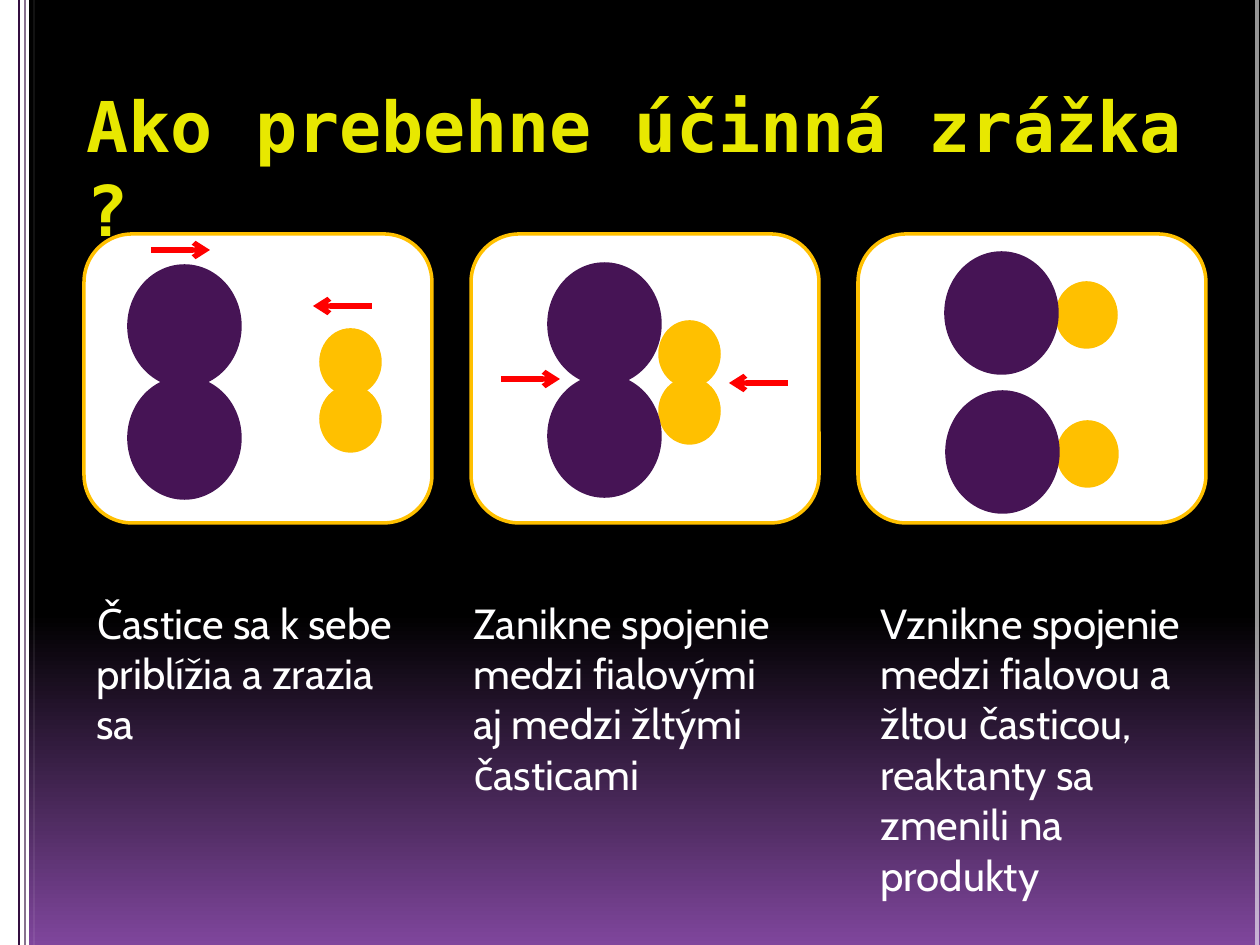
from lxml.etree import SubElement
from pptx import Presentation
from pptx.dml.color import RGBColor as RGB
from pptx.enum.shapes import MSO_CONNECTOR as CONN, MSO_SHAPE as SHAPE
from pptx.enum.text import MSO_ANCHOR as ANCHOR, PP_ALIGN as ALIGN
from pptx.oxml.ns import qn
from pptx.util import Pt

PX = 914400 / 126
COLORS = {k: RGB.from_string(v) for k, v in {
    "black": "000000", "white": "FFFFFF", "glow": "7F469C", "rule": "340F40",
    "title": "E8E800", "yellow": "FFC000", "violet": "461455", "red": "FF0000",
}.items()}


def add_filled(kind, box, fill, line):
    s = shapes.add_shape(kind, *(round(v * PX) for v in box))
    s.shadow.inherit = False
    s.fill.solid()
    s.fill.fore_color.rgb = COLORS[fill]
    s.line.color.rgb = COLORS[line]
    s.line.width = Pt(2)
    return s


def add_line(ends, color, width, opacity=100, arrow=False):
    c = shapes.add_connector(CONN.STRAIGHT, *(round(v * PX) for v in ends))
    c.line.color.rgb = COLORS[color]
    c.line.width = Pt(width)
    ln = c.line._get_or_add_ln()
    if opacity < 100:
        clr = ln.find(".//" + qn("a:srgbClr"))
        SubElement(clr, qn("a:alpha"), val=str(opacity * 1000))
    if arrow:
        SubElement(ln, qn("a:tailEnd"), type="arrow")
    SubElement(c._element.spPr, qn("a:effectLst"))


prs = Presentation()
prs.slide_width, prs.slide_height = round(1260 * PX), round(945 * PX)
slide = prs.slides.add_slide(prs.slide_layouts[5])
shapes = slide.shapes

# Background: black, fading to violet in the lower third
bg = slide.background.fill
bg.gradient()
bg.gradient_angle = 270
for stop, position, color in zip(bg.gradient_stops, (0.65, 1), ("black", "glow")):
    stop.position = position
    stop.color.rgb = COLORS[color]

# Side stripes
add_filled(SHAPE.RECTANGLE, (0, 0, 29, 945), "white", "white").line.fill.background()
for x, color, width, opacity in [(19, "rule", 1, 100), (25, "rule", 1, 59),
                                 (34, "white", 0.25, 59), (1257, "white", 2.25, 59)]:
    add_line((x, 0, x, 945), color, width, opacity)

# Title
title = shapes.title
title.left, title.top, title.width, title.height = (
    round(v * PX) for v in (74, 71, 1123, 126))
tf = title.text_frame
tf.word_wrap = True
tf.vertical_anchor = ANCHOR.TOP
tf.margin_top = round(12 * PX)
p = tf.paragraphs[0]
p.alignment = ALIGN.LEFT
r = p.add_run()
r.text = "Ako prebehne účinná zrážka ?"
for name, value in {"name": "DejaVu Sans Mono", "size": Pt(40), "bold": True}.items():
    setattr(r.font, name, value)
r.font.color.rgb = COLORS["title"]

# Stages of the collision: particle corners, arrows and caption
BIG, SMALL = (111, 120), (59, 64)
stages = [
    {"small": [(321, 330), (321, 387)], "big": [(129, 266), (129, 378)],
     "arrows": [(151, 250, 210, 250), (372, 306, 313, 306)],
     "text_left": 84, "text_height": 165,
     "caption": "Častice sa k sebe priblížia a zrazia sa"},
    {"small": [(660, 322), (660, 379)], "big": [(549, 264), (549, 376)],
     "arrows": [(501, 379, 560, 379), (788, 383, 729, 383)],
     "text_left": 461, "text_height": 217,
     "caption": "Zanikne spojenie medzi fialovými aj medzi žltými časticami"},
    {"small": [(1057, 283), (1058, 422)], "big": [(946, 253), (947, 392)],
     "arrows": [],
     "text_left": 868, "text_height": 318,
     "caption": "Vznikne spojenie medzi fialovou a žltou časticou, "
                "reaktanty sa zmenili na produkty"},
]
for i, stage in enumerate(stages):
    add_filled(SHAPE.ROUNDED_RECTANGLE, (84 + 387 * i, 234, 348, 289), "white", "yellow")
    for key, size, color in (("small", SMALL, "yellow"), ("big", BIG, "violet")):
        for corner in stage[key]:
            add_filled(SHAPE.OVAL, corner + size, color, color)
    for ends in stage["arrows"]:
        add_line(ends, "red", 3, arrow=True)

    box = (stage["text_left"], 591, 338, stage["text_height"])
    tf = shapes.add_textbox(*(round(v * PX) for v in box)).text_frame
    tf.word_wrap = True
    r = tf.paragraphs[0].add_run()
    r.text = stage["caption"]
    r.font.name, r.font.size = "Cabin", Pt(24)
    r.font.color.rgb = COLORS["white"]

prs.save("out.pptx")
